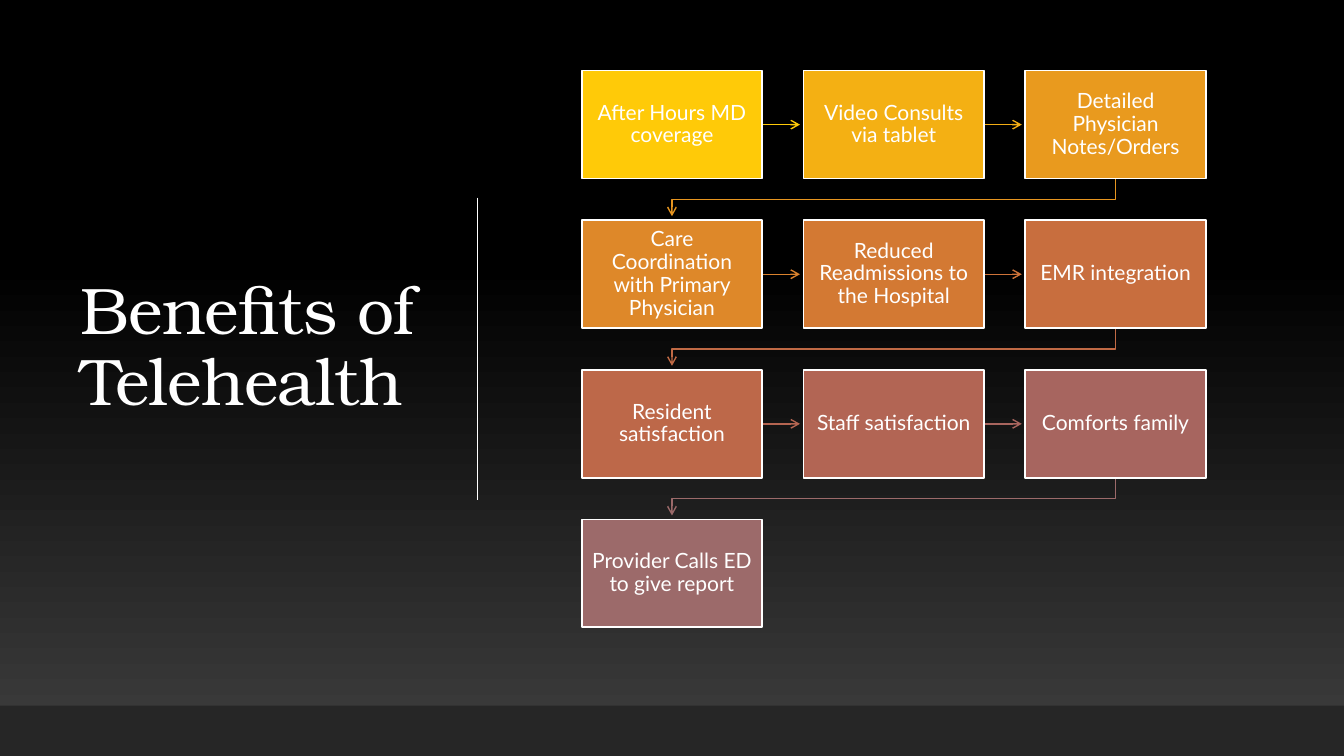
"""Build the telehealth benefits slide: a title beside a snaking flow of boxes."""
from copy import deepcopy
from dataclasses import dataclass

from lxml import etree
from pptx import Presentation
from pptx import util as u
from pptx.dml.color import RGBColor
from pptx.enum import shapes, text
from pptx.oxml import ns

COLOURS = {
    "white": "FFFFFF", "black": "000000", "grey": "3F3F3F", "footer": "262626",
    "yellow": "FFCA08", "yellow_arrow": "FFCA08",
    "amber": "F4B013", "amber_arrow": "F3AD14",
    "honey": "E99A1E", "honey_arrow": "E69520",
    "orange": "DE8829", "orange_arrow": "DA822D",
    "copper": "D37933", "copper_arrow": "CE7339",
    "rust": "C86E3E", "rust_arrow": "C16A45",
    "clay": "BD6849", "clay_arrow": "B56551",
    "brick": "B26554", "brick_arrow": "A8655E",
    "rose": "A7655F", "rose_arrow": "9C6A6A",
    "mauve": "9C6A6A",
}
COLUMNS = 3
LEFT, TOP = 14.66, 1.78
BOX_W, BOX_H = 4.55, 2.72
STEP_X, STEP_Y = 5.59, 3.77
ARROW_LENGTH = 0.95
SLIDE_W, SLIDE_H = 33.87, 19.05


@dataclass(frozen=True)
class Benefit:
    """A box of the flow and the name of its colour."""
    label: str
    colour: str


BENEFITS = [
    Benefit("After Hours MD coverage", "yellow"),
    Benefit("Video Consults via tablet", "amber"),
    Benefit("Detailed Physician Notes/Orders", "honey"),
    Benefit("Care Coordination with Primary Physician", "orange"),
    Benefit("Reduced Readmissions to the Hospital", "copper"),
    Benefit("EMR integration", "rust"),
    Benefit("Resident satisfaction", "clay"),
    Benefit("Staff satisfaction", "brick"),
    Benefit("Comforts family", "rose"),
    Benefit("Provider Calls ED to give report", "mauve"),
]


def rgb(name: str) -> RGBColor:
    """Return the named colour."""
    return RGBColor.from_string(COLOURS[name])


def style_line(sp, colour: str, width: float = 1, arrow: bool = False) -> None:
    """Set the colour and width of a line, with an optional arrowhead."""
    sp.line.color.rgb = rgb(colour)
    sp.line.width = u.Pt(width)
    if arrow:
        ln = sp._element.spPr.find(ns.qn("a:ln"))
        etree.SubElement(ln, ns.qn("a:tailEnd"), type="arrow")


def style_text(tf, font: str, size: float, align) -> None:
    """Format the single paragraph of a text frame."""
    tf.word_wrap = True
    tf.auto_size = text.MSO_AUTO_SIZE.NONE
    tf.vertical_anchor = text.MSO_ANCHOR.MIDDLE
    p = tf.paragraphs[0]
    p.alignment = align
    p.line_spacing = 0.9
    for r in p.runs:
        r.font.name = font
        r.font.size = u.Pt(size)
        r.font.color.rgb = rgb("white")


def add_background(s) -> None:
    """Fill the slide background with a gradient rising from grey to black."""
    fill = s.background.fill
    fill.gradient()
    fill.gradient_angle = 90
    for stop, colour, position in zip(fill.gradient_stops, ("grey", "black"), (0, 0.65)):
        stop.color.rgb = rgb(colour)
        stop.position = position
    stops = s._element.find(".//" + ns.qn("a:gsLst"))
    top_stop = deepcopy(stops[-1])
    top_stop.set("pos", "100000")
    stops.append(top_stop)


def add_title(s, label: str) -> None:
    """Place and format the title."""
    title = s.shapes.title
    title.left, title.top = u.Cm(1.78), u.Cm(1.75)
    title.width, title.height = u.Cm(9.37), u.Cm(14.05)
    title.text_frame.text = label
    style_text(title.text_frame, "TeX Gyre Bonum", 47, text.PP_ALIGN.LEFT)
    for r in title.text_frame.paragraphs[0].runs:
        r.font._element.set("spc", "-50")


def add_rect(s, x: float, y: float, w: float, h: float, colour: str):
    """Add a filled rectangle without an outline."""
    sp = s.shapes.add_shape(shapes.MSO_SHAPE.RECTANGLE, u.Cm(x), u.Cm(y), u.Cm(w), u.Cm(h))
    sp.shadow.inherit = False
    sp.fill.solid()
    sp.fill.fore_color.rgb = rgb(colour)
    sp.line.fill.background()
    return sp


def add_straight(s, x1: float, y1: float, x2: float, y2: float,
                 colour: str, arrow: bool = False) -> None:
    """Add a straight line."""
    sp = s.shapes.add_connector(shapes.MSO_CONNECTOR.STRAIGHT,
                                u.Cm(x1), u.Cm(y1), u.Cm(x2), u.Cm(y2))
    style_line(sp, colour, arrow=arrow)
    etree.SubElement(sp._element.spPr, ns.qn("a:effectLst"))


def add_return(s, x: float, y: float, colour: str) -> None:
    """Add the bent arrow from the end of a row to the start of the next."""
    first_x = LEFT + BOX_W / 2
    turn_y = y + (STEP_Y - BOX_H) / 2
    points = [(x, turn_y), (first_x, turn_y), (first_x, y + ARROW_LENGTH)]
    path = s.shapes.build_freeform(u.Cm(x), u.Cm(y))
    path.add_line_segments([(u.Cm(px), u.Cm(py)) for px, py in points], close=False)
    sp = path.convert_to_shape()
    sp.shadow.inherit = False
    sp.fill.background()
    style_line(sp, colour, arrow=True)


def add_benefit(s, index: int, benefit: Benefit) -> None:
    """Add a box of the flow and the arrow that leaves it."""
    row, column = divmod(index, COLUMNS)
    x, y = LEFT + column * STEP_X, TOP + row * STEP_Y
    if index < len(BENEFITS) - 1:
        arrow_colour = f"{benefit.colour}_arrow"
        if column < COLUMNS - 1:
            start, middle = x + BOX_W, y + BOX_H / 2
            add_straight(s, start, middle, start + ARROW_LENGTH, middle, arrow_colour, True)
        else:
            add_return(s, x + BOX_W / 2, y + BOX_H, arrow_colour)
    sp = add_rect(s, x, y, BOX_W, BOX_H, benefit.colour)
    style_line(sp, "white", 1.25)
    tf = sp.text_frame
    tf.margin_left = tf.margin_right = tf.margin_top = tf.margin_bottom = u.Cm(0.23)
    tf.text = benefit.label
    style_text(tf, "Lato", 15, text.PP_ALIGN.CENTER)


def main() -> None:
    """Build and save the slide."""
    prs = Presentation()
    prs.slide_width, prs.slide_height = u.Cm(SLIDE_W), u.Cm(SLIDE_H)
    s = prs.slides.add_slide(prs.slide_layouts.get_by_name("Title Only"))
    add_background(s)
    add_title(s, "Benefits of Telehealth")
    add_straight(s, 12.04, 4.98, 12.04, 12.6, "white")
    add_rect(s, 0, 17.78, SLIDE_W, SLIDE_H - 17.78, "footer")
    for index, benefit in enumerate(BENEFITS):
        add_benefit(s, index, benefit)
    prs.save("out.pptx")


if __name__ == "__main__":
    main()
